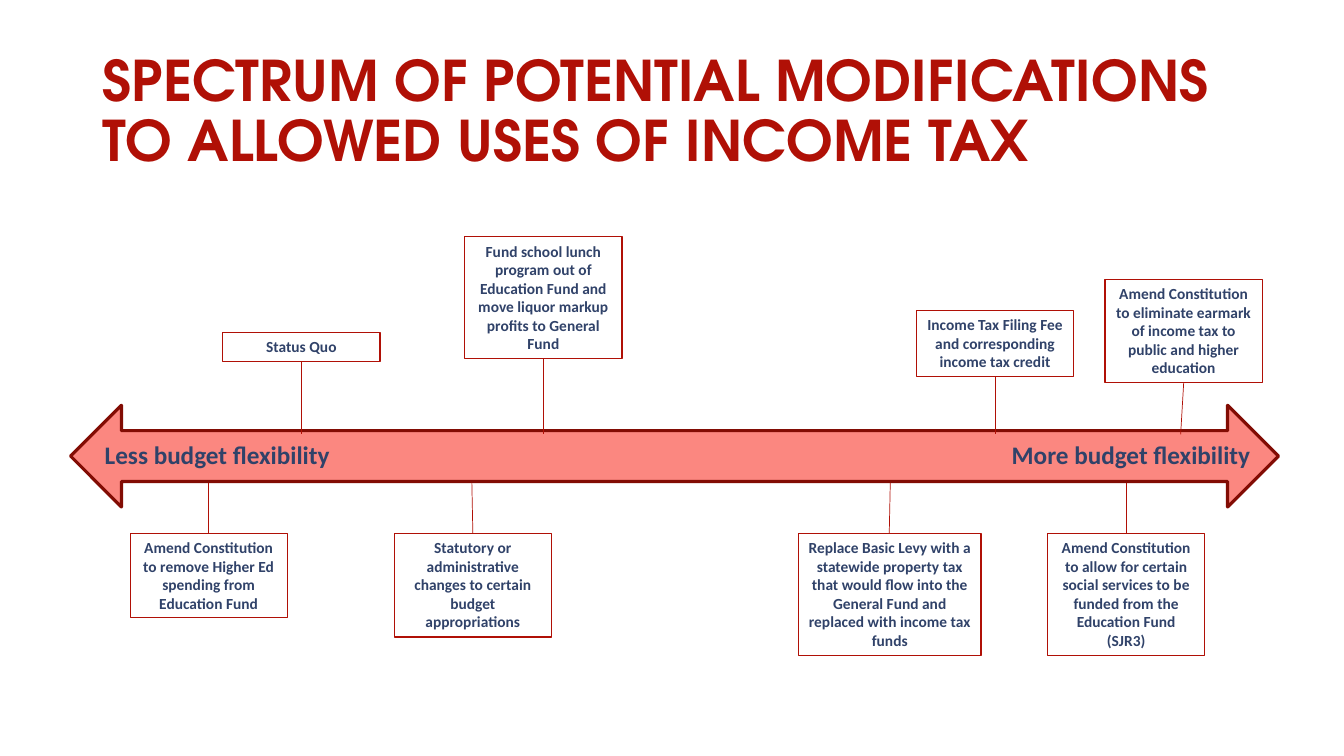
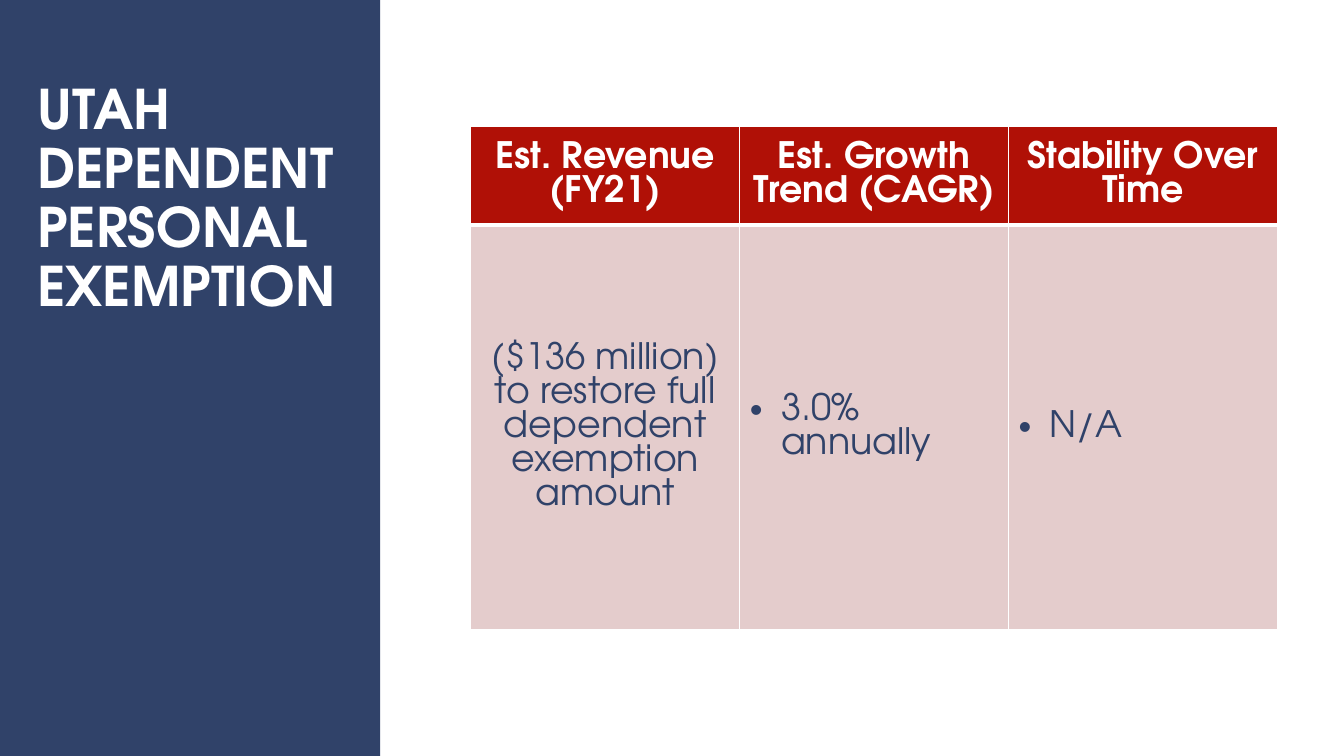
"""Builds two slides on income tax uses and the dependent exemption."""
from dataclasses import dataclass

from lxml.etree import SubElement
from pptx import Presentation
from pptx.dml.color import RGBColor
from pptx.enum.shapes import MSO_CONNECTOR, MSO_SHAPE
from pptx.enum.text import MSO_ANCHOR, MSO_AUTO_SIZE, PP_ALIGN
from pptx.oxml.ns import qn
from pptx.util import Emu, Pt

EMU_PER_PX = 9144
BAR_TOP, BAR_BOTTOM = 431, 479
LOWER_BOX_TOP = 529


@dataclass(frozen=True)
class Theme:
    """Colours, fonts and type sizes."""
    red: str = "B01006"
    dark_red: str = "820C04"
    salmon: str = "FB8780"
    blush: str = "E4CCCC"
    navy: str = "304269"
    white: str = "FFFFFF"
    heading_font: str = "TeX Gyre Adventor"
    body_font: str = "Calibri"
    title_size: int = 40
    panel_title_size: int = 39
    table_size: int = 26
    label_size: int = 18
    box_size: int = 11
    title_spacing: float = 0.9


THEME = Theme()


@dataclass(frozen=True)
class Option:
    """A boxed option tied to the spectrum bar."""
    text: str
    left: int
    top: int
    height: int
    width: int = 156
    lean: int = 0


OPTIONS = (
    Option("Status Quo", 221, 330, 29),
    Option("Fund school lunch program out of Education Fund and move liquor "
           "markup profits to General Fund", 461, 235, 121),
    Option("Income Tax Filing Fee and corresponding income tax credit",
           909, 308, 66),
    Option("Amend Constitution to eliminate earmark of income tax to public "
           "and higher education", 1096, 277, 103, lean=-3),
    Option("Amend Constitution to remove Higher Ed spending from Education "
           "Fund", 129, LOWER_BOX_TOP, 84),
    Option("Statutory or administrative changes to certain budget "
           "appropriations", 391, LOWER_BOX_TOP, 103, lean=-1),
    Option("Replace Basic Levy with a statewide property tax that would flow "
           "into the General Fund and replaced with income tax funds",
           792, LOWER_BOX_TOP, 121, width=181, lean=1),
    Option("Amend Constitution to allow for certain social services to be "
           "funded from the Education Fund (SJR3)",
           1039, LOWER_BOX_TOP, 121),
)

HEADERS = ("Est. Revenue (FY21)", "Est. Growth Trend (CAGR)",
           "Stability Over Time")
VALUES = ("($136 million) to restore full dependent exemption amount",
          "3.0% annually", "N/A")


def px(*lengths):
    """Turn px lengths into EMU."""
    return [Emu(length * EMU_PER_PX) for length in lengths]


def color(value):
    """Return a colour from its hex value."""
    return RGBColor.from_string(value)


def style_text(paragraph, font_name, size, ink, bold=True,
               alignment=PP_ALIGN.LEFT):
    """Format one paragraph."""
    paragraph.alignment = alignment
    font = paragraph.font
    font.name, font.size, font.bold = font_name, Pt(size), bold
    font.color.rgb = color(ink)


def set_title(slide, text, box, size, ink):
    """Fill, place and format the title placeholder."""
    title = slide.shapes.title
    title.left, title.top, title.width, title.height = px(*box)
    frame = title.text_frame
    frame.text = text
    frame.word_wrap = True
    frame.auto_size = MSO_AUTO_SIZE.NONE
    frame.vertical_anchor = MSO_ANCHOR.MIDDLE
    paragraph = frame.paragraphs[0]
    paragraph.line_spacing = THEME.title_spacing
    style_text(paragraph, THEME.heading_font, size, ink)
    return title


def add_shape(slide, kind, box, fill=None, line=None, line_width=0.75):
    """Add a flat preset shape."""
    shape = slide.shapes.add_shape(kind, *px(*box))
    shape.shadow.inherit = False
    if fill:
        shape.fill.solid()
        shape.fill.fore_color.rgb = color(fill)
    else:
        shape.fill.background()
    if line:
        shape.line.color.rgb = color(line)
        shape.line.width = Pt(line_width)
    else:
        shape.line.fill.background()
    return shape


def add_line(slide, start, end):
    """Add a thin red straight line."""
    line = slide.shapes.add_connector(MSO_CONNECTOR.STRAIGHT,
                                      *px(*start, *end))
    line.line.color.rgb = color(THEME.red)
    line.line.width = Pt(0.5)
    SubElement(line.element.spPr, qn("a:effectLst"))


def add_option(slide, option):
    """Add an option box and the line joining it to the bar."""
    box = add_shape(slide, MSO_SHAPE.RECTANGLE,
                    (option.left, option.top, option.width, option.height),
                    line=THEME.red)
    frame = box.text_frame
    frame.text = option.text
    frame.word_wrap = True
    frame.auto_size = MSO_AUTO_SIZE.SHAPE_TO_FIT_TEXT
    frame.vertical_anchor = MSO_ANCHOR.TOP
    style_text(frame.paragraphs[0], THEME.body_font, THEME.box_size,
               THEME.navy, alignment=PP_ALIGN.CENTER)
    center = option.left + option.width // 2
    if option.top < BAR_TOP:
        box_edge, bar_edge = option.top + option.height, BAR_TOP
    else:
        box_edge, bar_edge = option.top, BAR_BOTTOM
    add_line(slide, (center, box_edge), (center + option.lean, bar_edge))


def add_bar_label(slide, text, left, alignment):
    """Add a label on the spectrum bar."""
    label = slide.shapes.add_textbox(*px(left, 431, 300, 40))
    frame = label.text_frame
    frame.text = text
    frame.word_wrap = True
    style_text(frame.paragraphs[0], THEME.body_font, THEME.label_size,
               THEME.navy, alignment=alignment)


def add_bullet(paragraph, indent):
    """Give a paragraph a hanging bullet."""
    properties = paragraph._p.get_or_add_pPr()
    width = px(indent)[0]
    properties.set("marL", str(width))
    properties.set("indent", str(-width))
    SubElement(properties, qn("a:buFont"), typeface="Arial")
    SubElement(properties, qn("a:buChar"), char="•")


def set_borders(cell, top=1, bottom=1):
    """Draw white cell borders with widths in points."""
    properties = cell._tc.get_or_add_tcPr()
    for side, width in (("L", 1), ("R", 1), ("T", top), ("B", bottom)):
        border = SubElement(properties, qn(f"a:ln{side}"), w=str(Pt(width)))
        fill = SubElement(border, qn("a:solidFill"))
        SubElement(fill, qn("a:srgbClr"), val=THEME.white)


def fill_cell(cell, text, fill, ink, bold, bulleted):
    """Write and format one table cell."""
    cell.fill.solid()
    cell.fill.fore_color.rgb = color(fill)
    cell.vertical_anchor = MSO_ANCHOR.MIDDLE
    cell.text = text
    paragraph = cell.text_frame.paragraphs[0]
    if bulleted:
        add_bullet(paragraph, 31)
    style_text(paragraph, THEME.heading_font, THEME.table_size, ink, bold,
               PP_ALIGN.LEFT if bulleted else PP_ALIGN.CENTER)


def add_estimate_table(slide):
    """Add the revenue, growth and stability table."""
    table = slide.shapes.add_table(2, len(HEADERS),
                                   *px(467, 125, 800, 500)).table
    table.rows[0].height, table.rows[1].height = px(98, 402)
    for column, (header, value) in enumerate(zip(HEADERS, VALUES)):
        header_cell, value_cell = table.cell(0, column), table.cell(1, column)
        set_borders(header_cell, bottom=3)
        set_borders(value_cell, top=3)
        fill_cell(header_cell, header, THEME.red, THEME.white, True, False)
        fill_cell(value_cell, value, THEME.blush, THEME.navy, False,
                  column > 0)


def build_spectrum(slide):
    """Build the spectrum of modifications."""
    set_title(slide, "SPECTRUM OF POTENTIAL MODIFICATIONS TO ALLOWED USES OF "
              "INCOME TAX", (92, 40, 1150, 145), THEME.title_size, THEME.red)
    add_shape(slide, MSO_SHAPE.LEFT_RIGHT_ARROW, (70, 402, 1198, 101),
              THEME.salmon, THEME.dark_red, 2.25)
    for option in OPTIONS:
        add_option(slide, option)
    add_bar_label(slide, "Less budget flexibility", 94, PP_ALIGN.LEFT)
    add_bar_label(slide, "More budget flexibility", 950, PP_ALIGN.RIGHT)


def build_exemption(slide):
    """Build the dependent exemption estimates."""
    title = set_title(slide, "UTAH DEPENDENT PERSONAL EXEMPTION",
                      (27, 64, 317, 269), THEME.panel_title_size, THEME.white)
    panel = add_shape(slide, MSO_SHAPE.RECTANGLE, (0, 0, 377, 750),
                      THEME.navy)
    title.element.addprevious(panel.element)
    add_estimate_table(slide)


def main():
    """Build and save the presentation."""
    presentation = Presentation()
    presentation.slide_width, presentation.slide_height = px(1333, 750)
    title_only = presentation.slide_layouts[5]
    for build in (build_spectrum, build_exemption):
        build(presentation.slides.add_slide(title_only))
    presentation.save("out.pptx")


if __name__ == "__main__":
    main()
